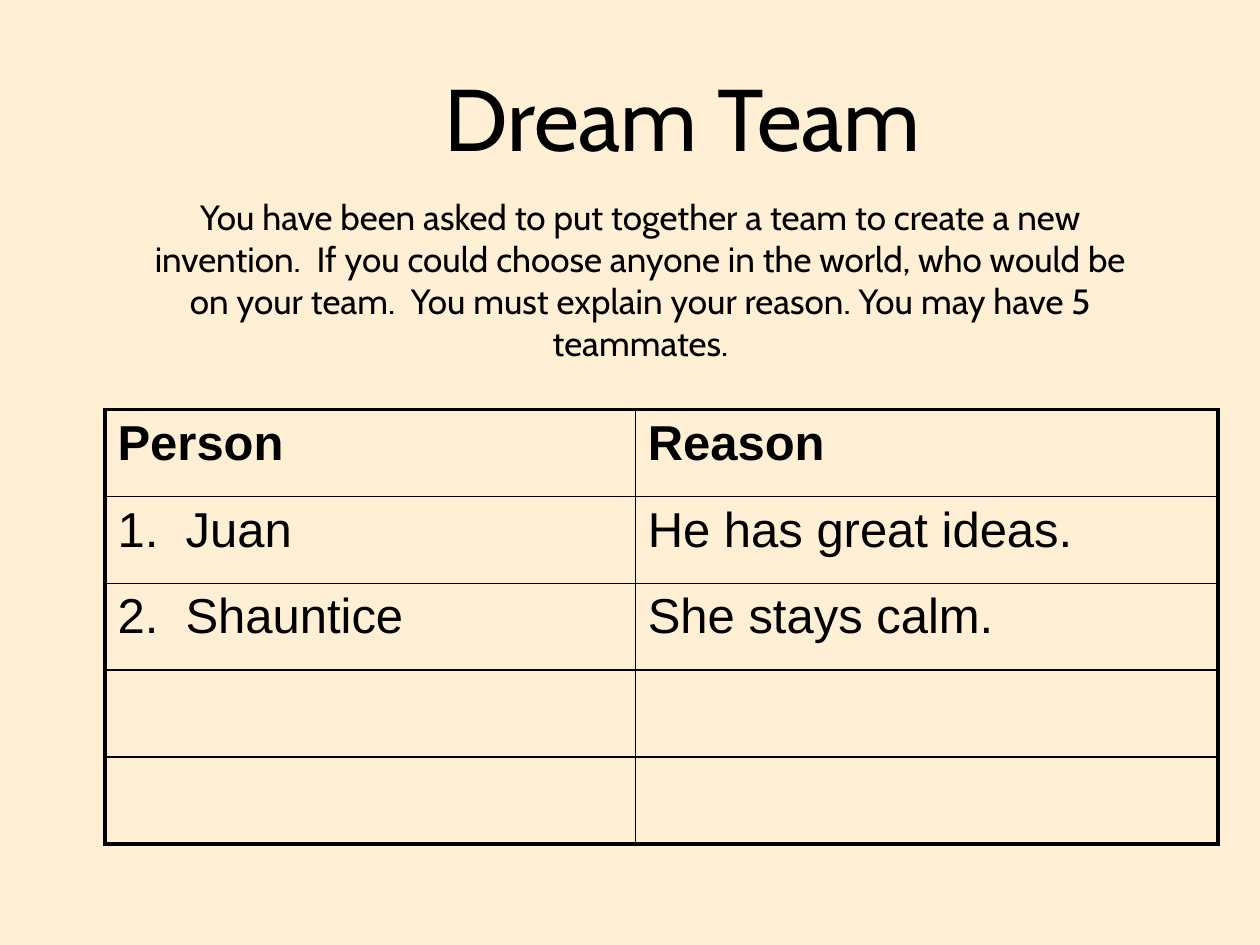
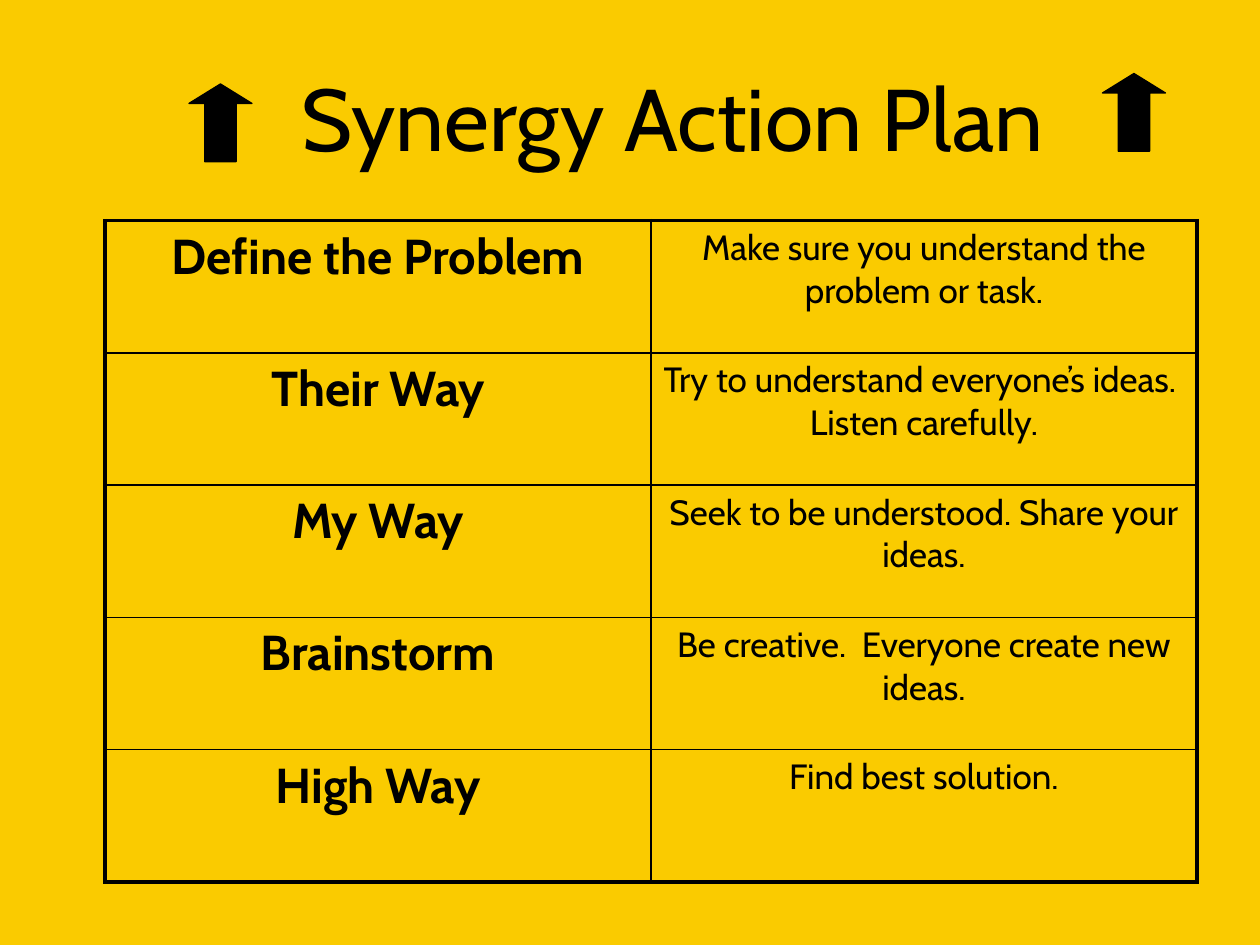
from pptx import Presentation
from pptx.dml.color import RGBColor
from pptx.enum.shapes import MSO_SHAPE
from pptx.enum.text import MSO_ANCHOR, PP_ALIGN
from pptx.oxml.ns import qn
from pptx.util import Inches, Pt
from lxml.etree import SubElement

COLORS = {"ink": "000000", "cream": "FFEFD5", "gold": "FACB00"}
HEADING_FONT, PLAIN_FONT = "Cabin", "Arial"
OUTER_RULE, INNER_RULE = Pt(2.25), Pt(1)
UNITS_PER_INCH = 12  # the slide is a grid of 120 columns and 90 rows
TABLE_LEFT = 10


def color(name):
    return RGBColor.from_string(COLORS[name])


def grid(*units):
    return [Inches(unit / UNITS_PER_INCH) for unit in units]


def add_slide(prs, background):
    slide = prs.slides.add_slide(prs.slide_layouts[6])
    slide.background.fill.solid()
    slide.background.fill.fore_color.rgb = color(background)
    return slide


def write(frame, text, size, font=HEADING_FONT, bold=False, align=PP_ALIGN.CENTER):
    frame.word_wrap = True
    paragraph = frame.paragraphs[0]
    paragraph.text = text
    paragraph.alignment = align
    paragraph.font.name = font
    paragraph.font.size = Pt(size)
    paragraph.font.bold = bold
    paragraph.font.color.rgb = color("ink")


def add_text(slide, box, text, size, anchor=MSO_ANCHOR.TOP):
    frame = slide.shapes.add_textbox(*grid(*box)).text_frame
    frame.vertical_anchor = anchor
    write(frame, text, size)


def add_title(slide, text):
    add_text(slide, (16, 3.6, 98, 15), text, 50, MSO_ANCHOR.MIDDLE)


def set_borders(cell, widths):
    """Rule the left, right, top and bottom sides, in that order."""
    properties = cell._tc.get_or_add_tcPr()
    for side, width in zip("LRTB", widths):
        line = SubElement(properties, qn(f"a:ln{side}"), w=str(width))
        fill = SubElement(line, qn("a:solidFill"))
        SubElement(fill, qn("a:srgbClr"), val=COLORS["ink"])


def add_ruled_table(slide, top, column_widths, row_height, rows, style):
    """style(row, column) gives the text settings of a cell."""
    row_count, column_count = len(rows), len(column_widths)
    box = grid(TABLE_LEFT, top, sum(column_widths), row_height * row_count)
    table = slide.shapes.add_table(row_count, column_count, *box).table
    table.first_row = table.horz_banding = False
    for column, width in zip(table.columns, grid(*column_widths)):
        column.width = width
    for r, texts in enumerate(rows):
        table.rows[r].height = grid(row_height)[0]
        for c, text in enumerate(texts):
            cell = table.cell(r, c)
            on_edge = (c == 0, c == column_count - 1, r == 0, r == row_count - 1)
            set_borders(cell, [OUTER_RULE if edge else INNER_RULE for edge in on_edge])
            cell.fill.background()
            write(cell.text_frame, text, **style(r, c))


def add_up_arrow(slide, left, top):
    arrow = slide.shapes.add_shape(MSO_SHAPE.UP_ARROW, *grid(left, top, 6, 7.4))
    arrow.adjustments[0], arrow.adjustments[1] = 0.5, 0.31
    arrow.shadow.inherit = False
    arrow.fill.solid()
    arrow.fill.fore_color.rgb = color("ink")
    arrow.line.color.rgb = color("ink")
    arrow.line.width = Pt(0.75)


def team_style(row, column):
    return {"size": 28, "font": PLAIN_FONT, "bold": row == 0, "align": PP_ALIGN.LEFT}


def plan_style(row, column):
    return {"size": 28, "bold": True} if column == 0 else {"size": 20}


def build_dream_team(prs):
    slide = add_slide(prs, "cream")
    add_title(slide, "Dream Team")
    add_text(slide, (13, 18, 96, 17.2),
             "You have been asked to put together a team to create a new invention.  "
             "If you could choose anyone in the world, who would be on your team.  "
             "You must explain your reason. You may have 5 teammates.", 20)
    add_ruled_table(slide, 39, (50.5, 55.5), 8.28, [
        ("Person", "Reason"),
        ("1.  Juan", "He has great ideas."),
        ("2.  Shauntice", "She stays calm."),
        ("", ""),
        ("", ""),
    ], team_style)


def build_action_plan(prs):
    slide = add_slide(prs, "gold")
    add_title(slide, "Synergy Action Plan ")
    add_ruled_table(slide, 21, (52, 52), 12.6, [
        ("Define the Problem", "Make sure you understand the problem or task."),
        ("Their Way", "Try to understand everyone’s ideas.  Listen carefully."),
        ("My Way", "Seek to be understood. Share your ideas."),
        ("Brainstorm", "Be creative.  Everyone create new ideas."),
        ("High Way", "Find best solution."),
    ], plan_style)
    # Arrows on either side of the title
    add_up_arrow(slide, 105, 7)
    add_up_arrow(slide, 18, 8)


def main():
    prs = Presentation()
    prs.slide_width, prs.slide_height = Inches(10), Inches(7.5)
    build_dream_team(prs)
    build_action_plan(prs)
    prs.save("out.pptx")


if __name__ == "__main__":
    main()
